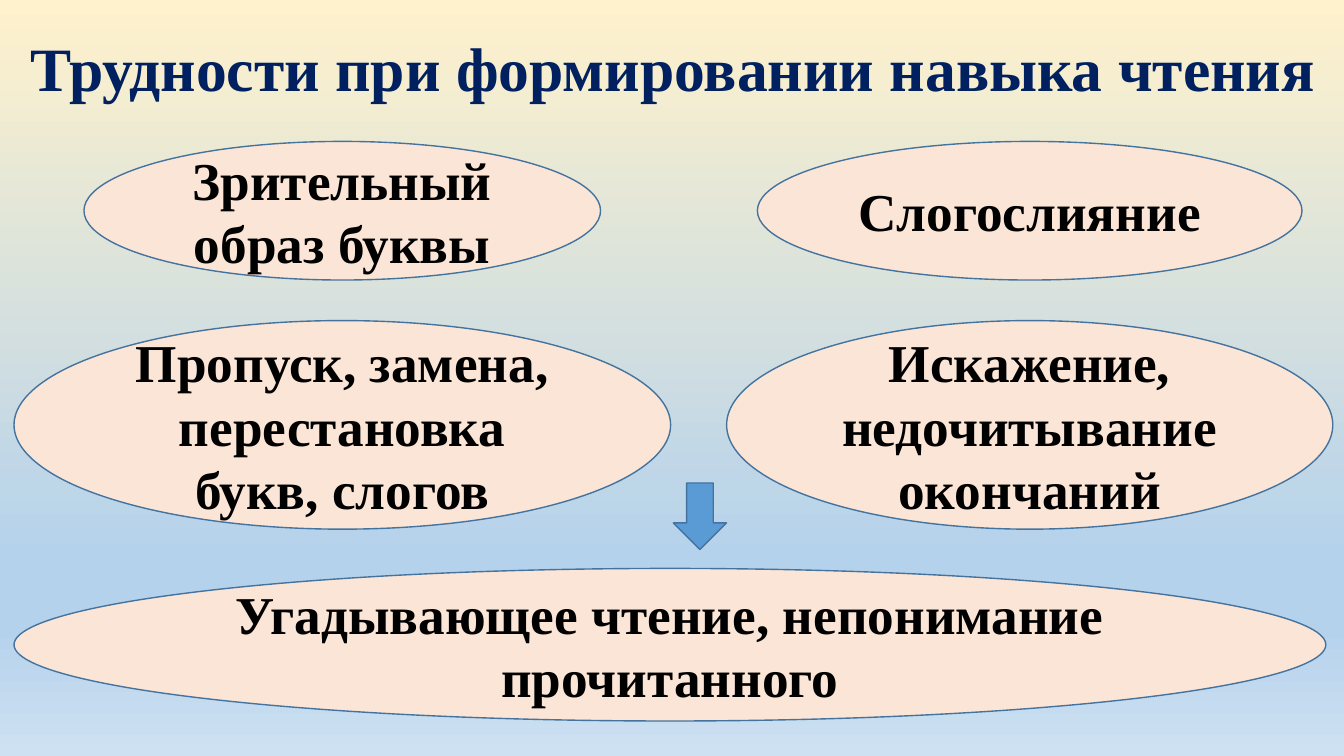
"""Build the slide on difficulties in forming the reading skill."""
from dataclasses import dataclass

from lxml import etree
from pptx import Presentation
from pptx import util as u
from pptx.dml.color import RGBColor
from pptx.enum import shapes, text
from pptx.oxml import ns


@dataclass(frozen=True)
class Theme:
    """Colours, type sizes and grid of the slide."""
    font: str = "Times New Roman"
    title: str = "002060"
    ink: str = "000000"
    oval: str = "FBE5D6"
    arrow: str = "5B9BD5"
    edge: str = "43739E"
    sky: tuple = ((0, "FFF2CC"), (74, "B5D2EC"), (83, "B5D2EC"), (100, "CEE1F2"))
    head: int = 44
    body: int = 38
    wide: int = u.Inches(13.33)
    high: int = u.Inches(7.5)
    cols: int = 96
    rows: int = 54


T = Theme()
SHAPE = shapes.MSO_SHAPE

TOP, MID, LOW = (10.1, 9.9), (22.9, 14.9), (40.6, 10.9)
OVALS = (
    ("Зрительный образ буквы", 6, 36.9, TOP),
    ("Слогослияние", 54.1, 38.9, TOP),
    ("Пропуск, замена, перестановка букв, слогов", 1, 46.9, MID),
    ("Искажение, недочитывание окончаний", 51.9, 43.3, MID),
    ("Угадывающее чтение, непонимание прочитанного", 1, 93.7, LOW),
)


def cell(col, row, wide, high):
    """Turn grid columns and rows into slide lengths."""
    dx, dy = T.wide / T.cols, T.high / T.rows
    return int(col * dx), int(row * dy), int(wide * dx), int(high * dy)


def paint(slide):
    """Fill the background with the vertical gradient."""
    fill = slide.background.fill
    fill.gradient()
    fill.gradient_angle = 270
    stops = slide.element.find(".//" + ns.qn("a:gsLst"))
    for old in list(stops):
        stops.remove(old)
    for pos, tone in T.sky:
        stop = etree.SubElement(stops, ns.qn("a:gs"), pos=str(pos * 1000))
        etree.SubElement(stop, ns.qn("a:srgbClr"), val=tone)


def write(frame, words, size, tone):
    """Write one centred bold paragraph."""
    par = frame.paragraphs[0]
    par.text = words
    par.alignment = text.PP_ALIGN.CENTER
    font = par.font
    font.name, font.size, font.bold = T.font, u.Pt(size), True
    font.color.rgb = RGBColor.from_string(tone)


def title(slide, words, *place):
    """Add the heading."""
    frame = slide.shapes.add_textbox(*cell(*place)).text_frame
    frame.word_wrap = False
    frame.auto_size = text.MSO_AUTO_SIZE.SHAPE_TO_FIT_TEXT
    write(frame, words, T.head, T.title)


def form(slide, kind, tone, *place):
    """Add a filled, outlined shape."""
    item = slide.shapes.add_shape(kind, *cell(*place))
    item.shadow.inherit = False
    item.fill.solid()
    item.fill.fore_color.rgb = RGBColor.from_string(tone)
    item.line.color.rgb = RGBColor.from_string(T.edge)
    item.line.width = u.Pt(1)
    return item


def oval(slide, words, col, wide, band):
    """Add a labelled ellipse in a band of rows."""
    row, high = band
    frame = form(slide, SHAPE.OVAL, T.oval, col, row, wide, high).text_frame
    frame.word_wrap = True
    frame.vertical_anchor = text.MSO_ANCHOR.MIDDLE
    write(frame, words, T.body, T.ink)


def main():
    """Build and save the slide."""
    deck = Presentation()
    deck.slide_width, deck.slide_height = T.wide, T.high
    slide = deck.slides.add_slide(deck.slide_layouts[6])
    paint(slide)
    title(slide, "Трудности при формировании навыка чтения", 1, 1.8, 94.2, 6.05)
    for item in OVALS:
        oval(slide, *item)
    form(slide, SHAPE.DOWN_ARROW, T.arrow, 48.1, 34.5, 3.8, 4.75)
    deck.save("out.pptx")


if __name__ == "__main__":
    main()
